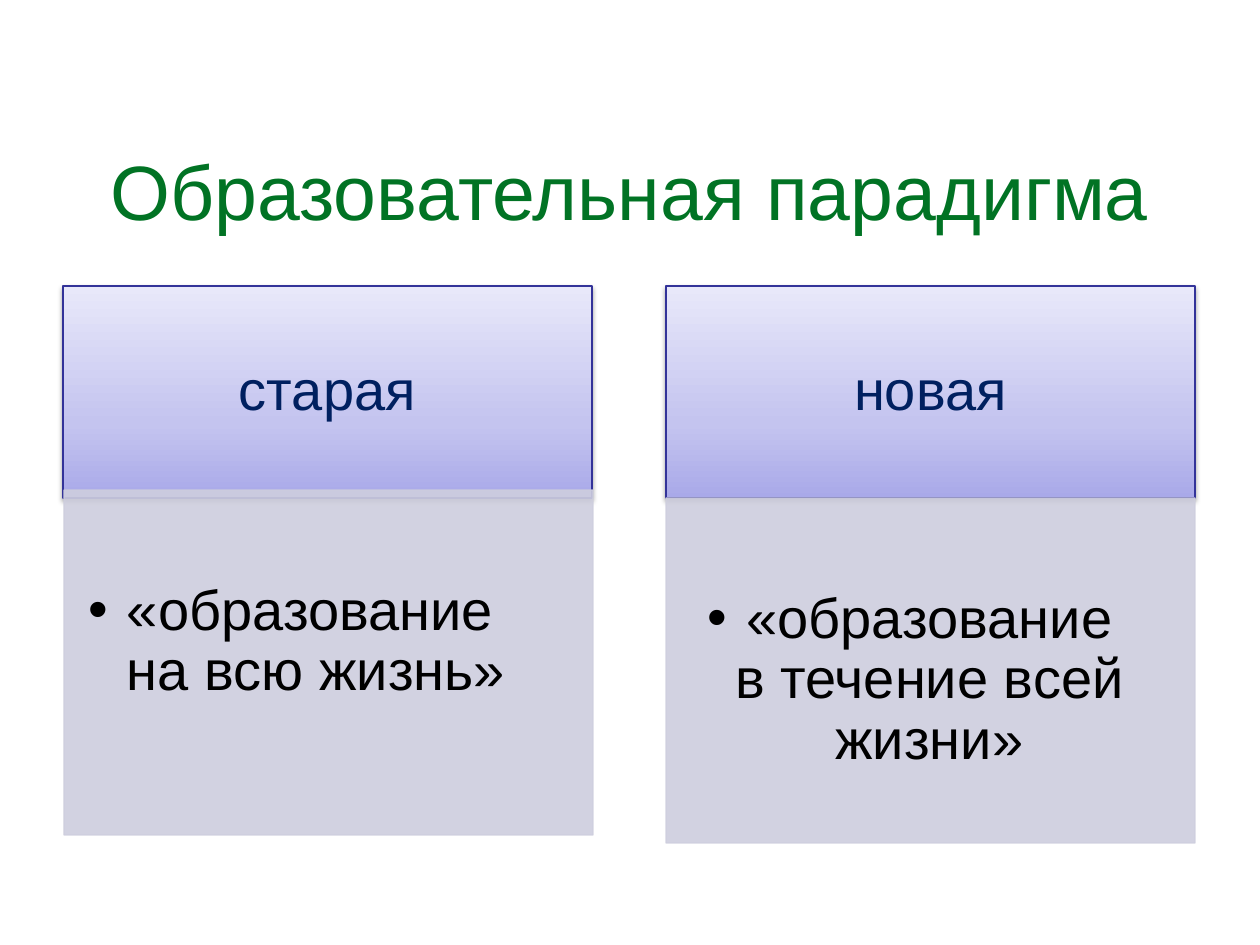
from lxml import etree
from pptx import Presentation
from pptx.dml.color import RGBColor
from pptx.enum.shapes import MSO_SHAPE
from pptx.enum.text import MSO_ANCHOR, MSO_AUTO_SIZE, PP_ALIGN
from pptx.oxml import parse_xml
from pptx.oxml.ns import nsdecls, qn
from pptx.util import Pt

EMU_PER_PX = 914400 / 126
RECTANGLE = MSO_SHAPE.RECTANGLE
TOP, MIDDLE = MSO_ANCHOR.TOP, MSO_ANCHOR.MIDDLE
LEFT, CENTER = PP_ALIGN.LEFT, PP_ALIGN.CENTER
NO_FIT = MSO_AUTO_SIZE.NONE
FONT = "Arial"
COLORS = {
    "title": "017324", "header_text": "002060", "header_line": "333399",
    "body_text": "000000", "body_fill": "CECEDE", "shadow": "000000",
}
HEADER_STOPS = {0: "A9A9E9", 35: "C4C4EF", 100: "E8E8FA"}
COLUMNS = [
    {"box": (63, 286, 529, 212), "header": "старая", "text": "«образование на всю жизнь»",
     "body_shift": (1, 204), "align": LEFT, "right_inset": 32},
    {"box": (666, 286, 529, 212), "header": "новая", "text": "«образование в течение всей жизни»",
     "body_shift": (0, 212), "align": CENTER, "right_inset": 65},
]
BODY_HEIGHT = 345


def px(length):
    return round(length * EMU_PER_PX)


def color(name):
    return RGBColor.from_string(COLORS[name])


def place(shape, box):
    for name, length in zip(("left", "top", "width", "height"), box):
        setattr(shape, name, px(length))


def write(shape, text, text_color, size, align, anchor, insets, line_spacing):
    frame = shape.text_frame
    frame.text = text
    margins = dict(zip(("margin_left", "margin_top", "margin_right", "margin_bottom"), map(px, insets)))
    for name, value in {"word_wrap": True, "auto_size": NO_FIT, "vertical_anchor": anchor, **margins}.items():
        setattr(frame, name, value)
    para = frame.paragraphs[0]
    for name, value in {"alignment": align, "line_spacing": line_spacing, "space_before": Pt(0)}.items():
        setattr(para, name, value)
    font = para.runs[0].font
    for name, value in {"name": FONT, "size": Pt(size), "bold": False}.items():
        setattr(font, name, value)
    font.color.rgb = color(text_color)
    return para


def outline(shape, line_color):
    shape.line.color.rgb = color(line_color)
    shape.line.width = Pt(0.75)


def shade_header(header):
    """Give the header its upward gradient and soft shadow."""
    properties = header.element.spPr
    stops = "".join(
        f'<a:gs pos="{position * 1000}"><a:srgbClr val="{value}"/></a:gs>'
        for position, value in HEADER_STOPS.items())
    properties.insert(2, parse_xml(
        f'<a:gradFill {nsdecls("a")} rotWithShape="1"><a:gsLst>{stops}</a:gsLst>'
        '<a:lin ang="16200000" scaled="0"/></a:gradFill>'))
    header.shadow.inherit = False
    properties.find(qn("a:effectLst")).append(parse_xml(
        f'<a:outerShdw {nsdecls("a")} blurRad="{Pt(3.1)}" dist="{Pt(1.6)}" dir="5400000" rotWithShape="0">'
        f'<a:srgbClr val="{COLORS["shadow"]}"><a:alpha val="38000"/></a:srgbClr></a:outerShdw>'))


def add_title(title, box):
    place(title, box)
    write(title, "Образовательная парадигма", "title", 44, CENTER, MIDDLE, (13, 6, 13, 6), 1.0)


def add_column(page, body, box, column):
    """Draw a header rectangle with its list panel in front of it."""
    left, top, width, height = box
    header = page.shapes.add_shape(RECTANGLE, *map(px, box))
    outline(header, "header_line")
    shade_header(header)
    write(header, column["header"], "header_text", 32, CENTER, MIDDLE, (32, 18, 32, 18), 0.9)

    shift_x, shift_y = column["body_shift"]
    place(body, (left + shift_x, top + shift_y, width, BODY_HEIGHT))
    body.fill.solid()
    body.fill.fore_color.rgb = color("body_fill")
    outline(body, "body_fill")
    for fill_color in body.element.spPr.iter(qn("a:srgbClr")):
        etree.SubElement(fill_color, qn("a:alpha")).set("val", "90000")
    para = write(body, column["text"], "body_text", 32, column["align"], TOP,
                 (24, 92, column["right_inset"], 35), 0.9)
    indent = px(39)
    properties = para._p.get_or_add_pPr()
    properties.set("marL", str(indent))
    properties.set("indent", str(-indent))
    header.element.addnext(body.element)


def main():
    deck = Presentation()
    deck.slide_width, deck.slide_height = px(1260), px(945)
    page = deck.slides.add_slide(deck.slide_layouts.get_by_name("Two Content"))
    title, *bodies = page.placeholders
    add_title(title, (63, 115, 1134, 149))
    for body, column in zip(bodies, COLUMNS):
        add_column(page, body, column["box"], column)
    deck.save("out.pptx")


if __name__ == "__main__":
    main()
